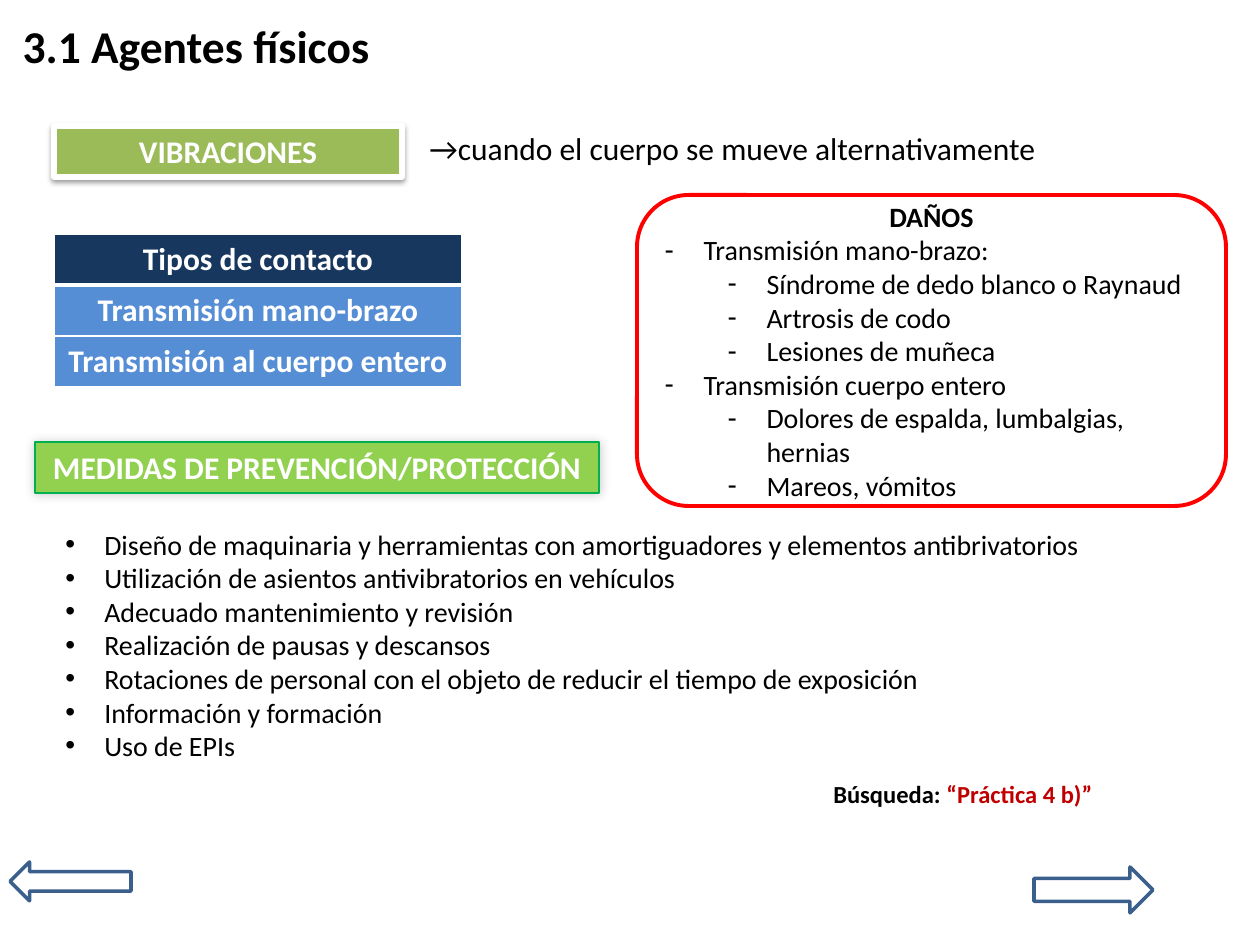
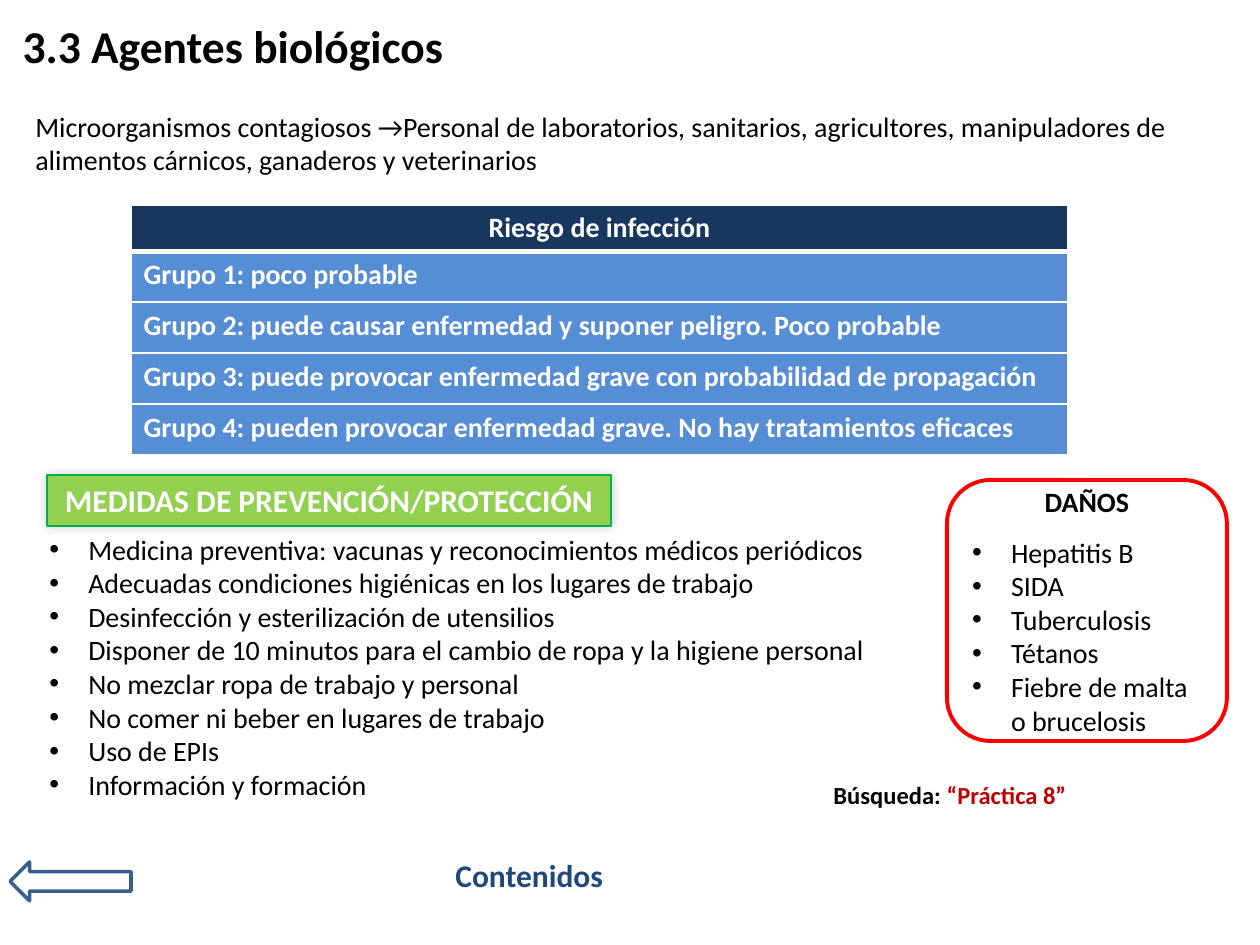
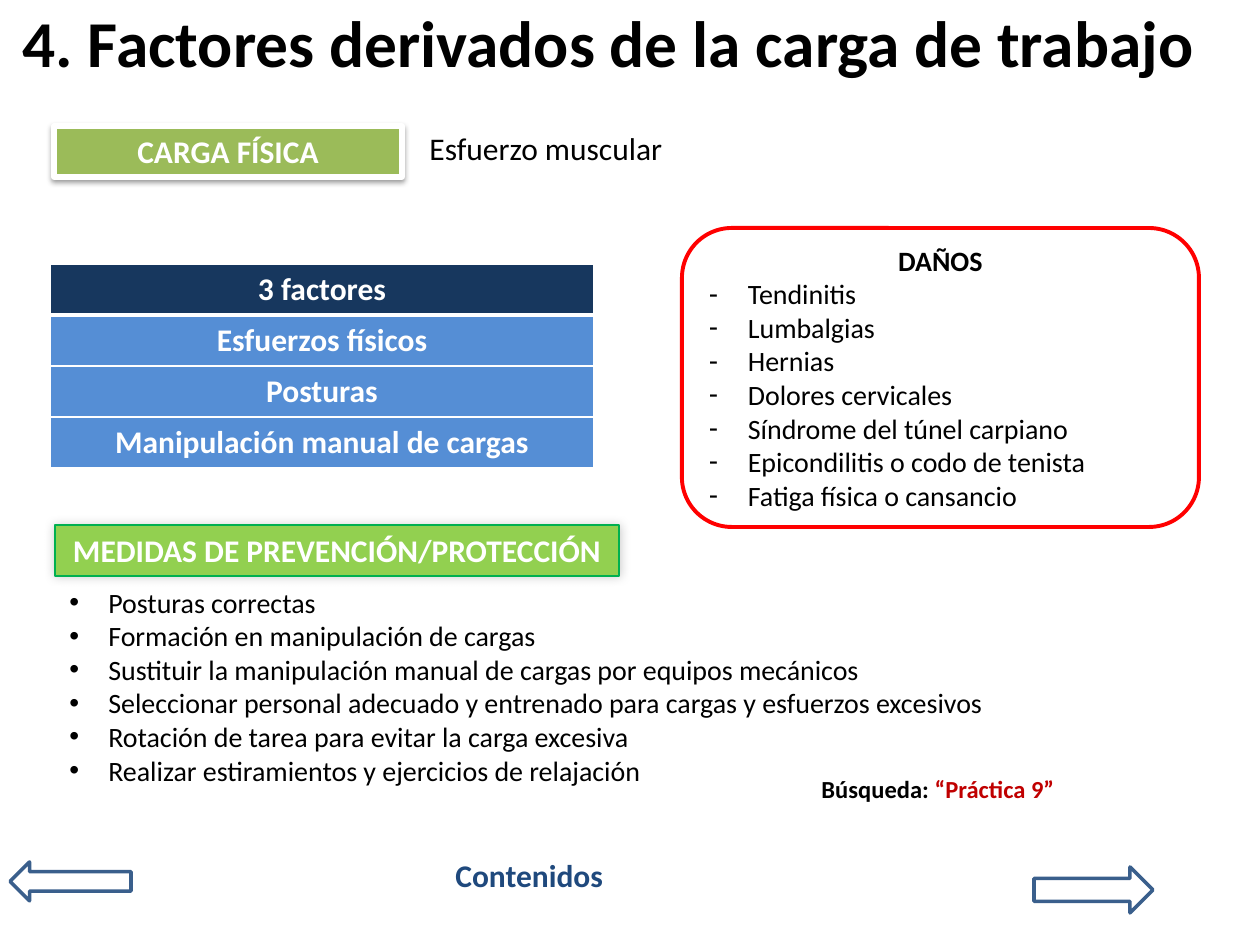
from lxml import etree
from pptx import Presentation
from pptx.dml.color import RGBColor
from pptx.enum.shapes import MSO_SHAPE
from pptx.enum.text import MSO_ANCHOR, PP_ALIGN
from pptx.oxml.ns import qn
from pptx.util import Inches, Pt

PX = 7257  # EMU per px, 126 px to the inch
LEFT, CENTER = PP_ALIGN.LEFT, PP_ALIGN.CENTER
TOP, MIDDLE = MSO_ANCHOR.TOP, MSO_ANCHOR.MIDDLE
RECT, ROUNDED = MSO_SHAPE.RECTANGLE, MSO_SHAPE.ROUNDED_RECTANGLE
LEFT_ARROW, RIGHT_ARROW = MSO_SHAPE.LEFT_ARROW, MSO_SHAPE.RIGHT_ARROW

FONT = "Calibri"
BLACK, WHITE = "000000", "FFFFFF"
HEADER_BLUE, ROW_BLUE = "17375E", "558ED5"
ARROW_BLUE, CONTENTS_BLUE = "3A5F8C", "1F497D"
TOPIC_GREEN, MEASURES_GREEN, MEASURES_EDGE = "9BBB59", "92D050", "00B050"
DAMAGE_RED, PRACTICE_RED = "FF0000", "C00000"
INDENT, LEVEL_STEP, ROW_HEIGHT = 39, 63, 51

# Shadows: opacity %, blur pt, distance pt, direction in degrees
TOPIC_SHADOW = (38, 3.1, 1.6, 90)
MEASURES_SHADOW = (20, 6, 0, 225)

SLIDES = [
    {
        "title": "3.1 Agentes físicos", "title_top": 6, "title_size": 26,
        "topic": "VIBRACIONES",
        "intro": "→cuando el cuerpo se mueve alternativamente",
        "intro_box": (417, 123, 712, 51), "intro_size": 18,
        "table_box": (54, 234, 408, 51), "table_size": 18, "row_align": CENTER,
        "rows": ["Tipos de contacto", "Transmisión mano-brazo",
                 "Transmisión al cuerpo entero"],
        "damage_box": (637, 195, 589, 311), "damage_mark": "-", "damage_gap": 0,
        "damages": [
            (0, "Transmisión mano-brazo:"),
            (1, "Síndrome de dedo blanco o Raynaud"),
            (1, "Artrosis de codo"),
            (1, "Lesiones de muñeca"),
            (0, "Transmisión cuerpo entero"),
            (1, "Dolores de espalda, lumbalgias, hernias"),
            (1, "Mareos, vómitos"),
        ],
        "heading_at": (35, 442), "measures_box": (53, 521, 1076, 251),
        "measures": [
            "Diseño de maquinaria y herramientas con amortiguadores y elementos antibrivatorios",
            "Utilización de asientos antivibratorios en vehículos",
            "Adecuado mantenimiento y revisión",
            "Realización de pausas y descansos",
            "Rotaciones de personal con el objeto de reducir el tiempo de exposición",
            "Información y formación",
            "Uso de EPIs",
        ],
        "practice": "“Práctica 4 b)”", "search_at": (772, 773),
        "has_next": True, "has_contents": False,
    },
    {
        "title": "3.3 Agentes biológicos", "title_top": 6, "title_size": 26,
        "topic": None,
        "intro": "Microorganismos contagiosos →Personal de laboratorios, sanitarios, "
                 "agricultores, manipuladores de alimentos cárnicos, ganaderos y veterinarios",
        "intro_box": (23, 103, 1235, 81), "intro_size": 16,
        "table_box": (131, 205, 937, 45), "table_size": 16, "row_align": LEFT,
        "rows": ["Riesgo de infección", "Grupo 1: poco probable",
                 "Grupo 2: puede causar enfermedad y suponer peligro. Poco probable",
                 "Grupo 3: puede provocar enfermedad grave con probabilidad de propagación",
                 "Grupo 4: pueden provocar enfermedad grave. No hay tratamientos eficaces"],
        "damage_box": (947, 480, 280, 261), "damage_mark": "•", "damage_gap": 10,
        "damages": [(0, "Hepatitis B"), (0, "SIDA"), (0, "Tuberculosis"),
                    (0, "Tétanos"), (0, "Fiebre de malta o brucelosis")],
        "heading_at": (47, 475), "measures_box": (37, 526, 1160, 285),
        "measures": [
            "Medicina preventiva: vacunas y reconocimientos médicos periódicos",
            "Adecuadas condiciones higiénicas en los lugares de trabajo",
            "Desinfección y esterilización de utensilios",
            "Disponer de 10 minutos para el cambio de ropa y la higiene personal",
            "No mezclar ropa de trabajo y personal",
            "No comer ni beber en lugares de trabajo",
            "Uso de EPIs",
            "Información y formación",
        ],
        "practice": "“Práctica 8”", "search_at": (759, 774),
        "has_next": False, "has_contents": True,
    },
    {
        "title": "4. Factores derivados de la carga de trabajo",
        "title_top": 2, "title_size": 37.4,
        "topic": "CARGA FÍSICA",
        "intro": "Esfuerzo muscular",
        "intro_box": (417, 123, 712, 51), "intro_size": 18,
        "table_box": (50, 264, 544, 51), "table_size": 18, "row_align": CENTER,
        "rows": ["3 factores", "Esfuerzos físicos", "Posturas",
                 "Manipulación manual de cargas"],
        "damage_box": (682, 228, 517, 299), "damage_mark": "-", "damage_gap": 0,
        "damages": [(0, "Tendinitis"), (0, "Lumbalgias"), (0, "Hernias"),
                    (0, "Dolores cervicales"), (0, "Síndrome del túnel carpiano"),
                    (0, "Epicondilitis o codo de tenista"),
                    (0, "Fatiga física o cansancio")],
        "heading_at": (55, 525), "measures_box": (57, 579, 1076, 217),
        "measures": [
            "Posturas correctas",
            "Formación en manipulación de cargas",
            "Sustituir la manipulación manual de cargas por equipos mecánicos",
            "Seleccionar personal adecuado y entrenado para cargas y esfuerzos excesivos",
            "Rotación de tarea para evitar la carga excesiva",
            "Realizar estiramientos y ejercicios de relajación",
        ],
        "practice": "“Práctica 9”", "search_at": (747, 768),
        "has_next": True, "has_contents": True,
    },
]


def write(frame, lines, size, color=BLACK, bold=False, align=LEFT, anchor=TOP, mark=None):
    """Fill a text frame with (level, text) lines, bulleted when a mark is given."""
    frame.word_wrap = True
    frame.vertical_anchor = anchor
    frame.text = "\n".join(text for _, text in lines)
    for paragraph, (level, _) in zip(frame.paragraphs, lines):
        paragraph.alignment = align
        if mark and level is not None:
            paragraph.level = level
            properties = paragraph._p.get_or_add_pPr()
            properties.set("marL", str((INDENT + level * LEVEL_STEP) * PX))
            properties.set("indent", str(-INDENT * PX))
            etree.SubElement(properties, qn("a:buFont"), typeface="Arial")
            etree.SubElement(properties, qn("a:buChar"), char=mark)
        for run in paragraph.runs:
            run.font.name = FONT
            run.font.size = Pt(size)
            run.font.bold = bold
            run.font.color.rgb = RGBColor.from_string(color)


def add_panel(slide, preset, box, line, weight, fill=None, shadow=None):
    """Add an outlined preset shape and return its text frame."""
    shape = slide.shapes.add_shape(preset, *(v * PX for v in box))
    shape.line.color.rgb = RGBColor.from_string(line)
    shape.line.width = Pt(weight)
    if fill:
        shape.fill.solid()
        shape.fill.fore_color.rgb = RGBColor.from_string(fill)
    else:
        shape.fill.background()
    shape.shadow.inherit = False
    if shadow:
        opacity, blur, distance, direction = shadow
        effects = shape._element.spPr.find(qn("a:effectLst"))
        outer = etree.SubElement(
            effects, qn("a:outerShdw"), blurRad=str(Pt(blur)), dist=str(Pt(distance)),
            dir=str(direction * 60000), rotWithShape="0")
        shade = etree.SubElement(outer, qn("a:srgbClr"), val=BLACK)
        etree.SubElement(shade, qn("a:alpha"), val=str(opacity * 1000))
    return shape.text_frame


deck = Presentation()
deck.slide_width, deck.slide_height = Inches(10), Inches(7.5)
title_only = deck.slide_layouts[5]

for content in SLIDES:
    slide = deck.slides.add_slide(title_only)
    shapes = slide.shapes

    title = shapes.title
    title.left, title.top = 10 * PX, content["title_top"] * PX
    title.width, title.height = 1250 * PX, 79 * PX
    write(title.text_frame, [(0, content["title"])], content["title_size"],
          bold=True, anchor=MIDDLE)

    # Topic and its definition
    if content["topic"]:
        topic = add_panel(slide, RECT, (54, 126, 348, 51), WHITE, 3, TOPIC_GREEN, TOPIC_SHADOW)
        write(topic, [(0, content["topic"])], 18, WHITE, True, CENTER)
    intro = shapes.add_textbox(*(v * PX for v in content["intro_box"]))
    write(intro.text_frame, [(0, content["intro"])], content["intro_size"])

    # Table of types, groups or factors
    left, top, width, header_height = content["table_box"]
    rows = content["rows"]
    height = header_height + ROW_HEIGHT * (len(rows) - 1)
    table = shapes.add_table(len(rows), 1, left * PX, top * PX, width * PX, height * PX).table
    for index, text in enumerate(rows):
        is_header = index == 0
        table.rows[index].height = (header_height if is_header else ROW_HEIGHT) * PX
        cell = table.cell(index, 0)
        if is_header:
            border = etree.SubElement(cell._tc.get_or_add_tcPr(), qn("a:lnB"), w=str(Pt(3)))
            stroke = etree.SubElement(border, qn("a:solidFill"))
            etree.SubElement(stroke, qn("a:srgbClr"), val=WHITE)
        cell.fill.solid()
        cell.fill.fore_color.rgb = RGBColor.from_string(HEADER_BLUE if is_header else ROW_BLUE)
        write(cell.text_frame, [(0, text)], content["table_size"], WHITE, True,
              CENTER if is_header else content["row_align"])

    # Damages
    damages = add_panel(slide, ROUNDED, content["damage_box"], DAMAGE_RED, 2.25)
    write(damages, [(None, "DAÑOS")] + content["damages"], 16, anchor=MIDDLE,
          mark=content["damage_mark"])
    heading = damages.paragraphs[0]
    heading.alignment = CENTER
    heading.space_after = Pt(content["damage_gap"])
    heading.runs[0].font.bold = True

    # Prevention measures
    measures_heading = add_panel(slide, RECT, (*content["heading_at"], 564, 51),
                                 MEASURES_EDGE, 0.75, MEASURES_GREEN, MEASURES_SHADOW)
    write(measures_heading, [(0, "MEDIDAS DE PREVENCIÓN/PROTECCIÓN")], 18, WHITE, True, CENTER)
    measures = shapes.add_textbox(*(v * PX for v in content["measures_box"]))
    write(measures.text_frame, [(0, text) for text in content["measures"]], 16, mark="•")

    # Search exercise
    search = shapes.add_textbox(*(v * PX for v in (*content["search_at"], 382, 43)))
    write(search.text_frame, [(0, "Búsqueda:")], 14, bold=True, align=CENTER)
    practice = search.text_frame.paragraphs[0].add_run()
    practice.text = " " + content["practice"]
    practice.font.name = FONT
    practice.font.size = Pt(14)
    practice.font.bold = True
    practice.font.color.rgb = RGBColor.from_string(PRACTICE_RED)

    # Navigation
    add_panel(slide, LEFT_ARROW, (10, 862, 121, 39), ARROW_BLUE, 2)
    if content["has_next"]:
        add_panel(slide, RIGHT_ARROW, (1034, 867, 119, 46), ARROW_BLUE, 2)
    if content["has_contents"]:
        contents = shapes.add_textbox(443 * PX, 850 * PX, 182 * PX, 51 * PX)
        write(contents.text_frame, [(0, "Contenidos")], 18, CONTENTS_BLUE, True)

deck.save("out.pptx")
